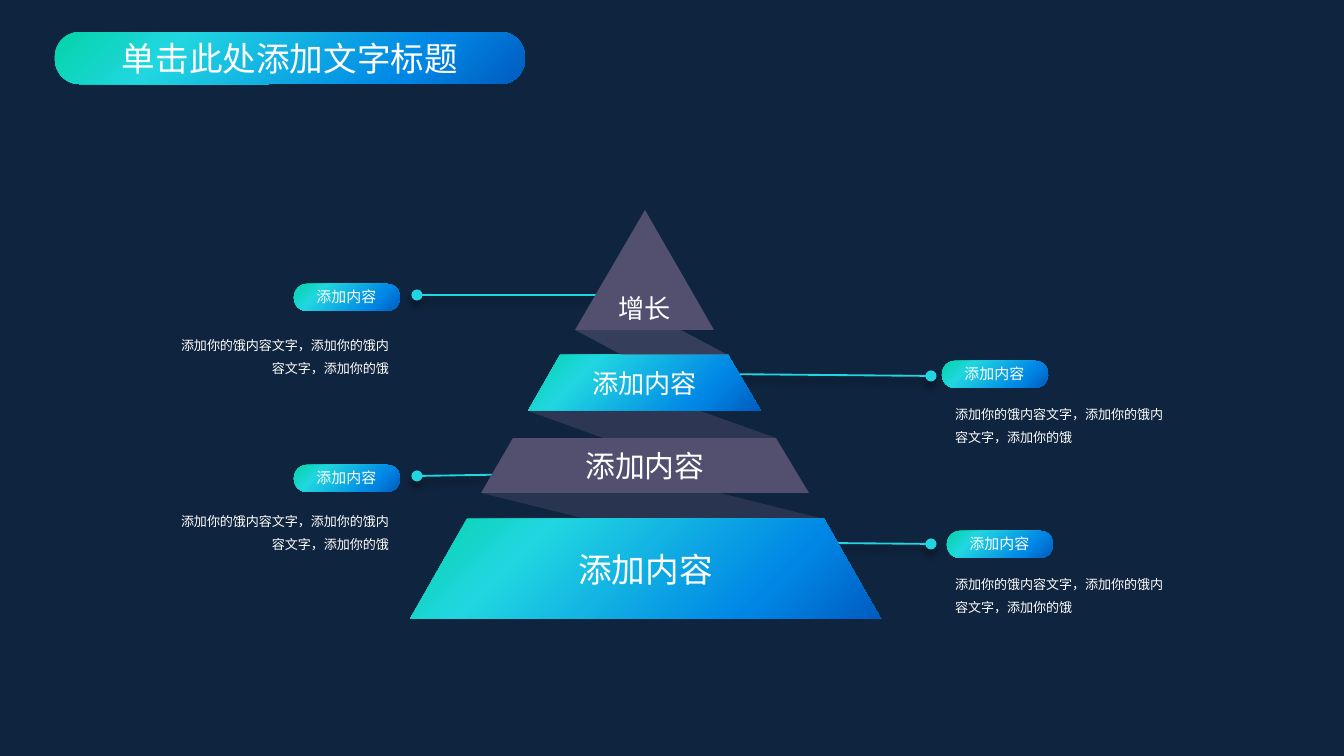
"""Build a dark slide with a four-tier pyramid and its labelled callouts."""
from dataclasses import dataclass

from lxml.etree import SubElement
from pptx import Presentation
from pptx.dml.color import RGBColor
from pptx.enum.shapes import MSO_CONNECTOR, MSO_SHAPE
from pptx.enum.text import MSO_ANCHOR, MSO_AUTO_SIZE, PP_ALIGN
from pptx.oxml.ns import qn
from pptx.util import Pt

SCALE = 914400 / 134.4
NAVY = RGBColor(0x0F, 0x24, 0x3E)
WHITE = RGBColor(0xFF, 0xFF, 0xFF)
CYAN = RGBColor(0x21, 0xD6, 0xE0)
PLUM = RGBColor(0x52, 0x4F, 0x6F)
SLATE = RGBColor(0x57, 0x55, 0x75)
BLACK = RGBColor(0, 0, 0)
STOPS = (
    (0, RGBColor(0x03, 0xD4, 0xA8)),
    (25, CYAN),
    (75, RGBColor(0x00, 0x87, 0xE6)),
    (100, RGBColor(0x00, 0x5C, 0xBF)),
)
SANS = "Noto Sans CJK SC"
LABEL = "添加内容"
NOTE = "添加你的饿内容文字，添加你的饿内容文字，添加你的饿"


@dataclass
class Band:
    top: int
    bottom: int
    top_x: tuple[int, int]
    base_x: tuple[int, int]
    color: RGBColor | None = None
    alpha: int = 100
    text: str = ""
    size: int = 0
    anchor: MSO_ANCHOR = MSO_ANCHOR.MIDDLE


@dataclass
class Callout:
    pill: tuple[int, int]
    note: tuple[int, int]
    start: tuple[int, int]
    end: tuple[int, int]
    align: PP_ALIGN


BANDS = (
    Band(210, 330, (645, 645), (575, 714), PLUM, text="增长", size=14, anchor=MSO_ANCHOR.BOTTOM),
    Band(355, 411, (560, 728), (528, 761), text=LABEL, size=14),
    Band(438, 493, (513, 776), (481, 809), PLUM, text=LABEL, size=16),
    Band(330, 355, (575, 681), (622, 728), SLATE, 54),
    Band(411, 438, (528, 700), (603, 776), PLUM, 46),
    Band(493, 519, (481, 720), (586, 824), PLUM, 38),
    Band(519, 619, (467, 824), (410, 881), text=LABEL, size=18),
)
CALLOUTS = (
    Callout((294, 284), (161, 323), (598, 295), (417, 295), PP_ALIGN.RIGHT),
    Callout((294, 465), (161, 499), (598, 473), (417, 476), PP_ALIGN.RIGHT),
    Callout((942, 361), (942, 392), (714, 374), (931, 376), PP_ALIGN.LEFT),
    Callout((947, 531), (942, 562), (714, 542), (931, 544), PP_ALIGN.LEFT),
)


def emu(*px: int) -> list[int]:
    return [round(p * SCALE) for p in px]


def blend(shape) -> None:
    shape.fill.gradient()
    shape.fill.gradient_angle = 315
    stops = shape._element.spPr.find(".//" + qn("a:gsLst"))
    stops.clear()
    for pos, color in STOPS:
        stop = SubElement(stops, qn("a:gs"), pos=str(pos * 1000))
        SubElement(stop, qn("a:srgbClr"), val=str(color))


def paint(shape, color: RGBColor | None = None, alpha: int = 100) -> None:
    shape.shadow.inherit = False
    shape.line.fill.background()
    if color is None:
        blend(shape)
        return
    shape.fill.solid()
    shape.fill.fore_color.rgb = color
    if alpha < 100:
        tint = shape._element.spPr.find(qn("a:solidFill"))[0]
        SubElement(tint, qn("a:alpha"), val=str(alpha * 1000))


def write(shape, text: str, size: int, font: str = SANS, align: PP_ALIGN = PP_ALIGN.CENTER) -> None:
    shape.text_frame.text = text
    para = shape.text_frame.paragraphs[0]
    para.alignment = align
    run = para.runs[0]
    run.font.size = Pt(size)
    run.font.color.rgb = WHITE
    run.font.name = font
    SubElement(run.font._element, qn("a:ea"), typeface=font)


def add_pill(shapes, x: int, y: int, w: int, h: int):
    pill = shapes.add_shape(MSO_SHAPE.ROUNDED_RECTANGLE, *emu(x, y, w, h))
    pill.adjustments[0] = 0.47
    paint(pill)
    return pill


def add_line(shapes, start: tuple[int, int], end: tuple[int, int]) -> None:
    line = shapes.add_connector(MSO_CONNECTOR.STRAIGHT, *emu(*start, *end))
    line.line.color.rgb = CYAN
    line.line.width = Pt(1)
    SubElement(line.line._ln, qn("a:tailEnd"), type="oval")
    glow = SubElement(line._element.spPr, qn("a:effectLst"))
    shade = SubElement(glow, qn("a:outerShdw"), blurRad=str(Pt(4)), dist=str(Pt(3)), dir="5400000")
    tint = SubElement(shade, qn("a:srgbClr"), val=str(BLACK))
    SubElement(tint, qn("a:alpha"), val="40000")


def add_callout(shapes, item: Callout) -> None:
    x, y = item.pill
    add_pill(shapes, x, y, 106, 27)
    label = shapes.add_textbox(*emu(x + 9, y - 3, 87, 32))
    label.text_frame.word_wrap = False
    write(label, LABEL, 8, "Lato")
    add_line(shapes, item.start, item.end)
    note = shapes.add_textbox(*emu(*item.note, 241, 58))
    note.text_frame.word_wrap = True
    write(note, NOTE, 7, align=item.align)
    note.text_frame.paragraphs[0].line_spacing = 1.5
    for box in (label, note):
        box.text_frame.auto_size = MSO_AUTO_SIZE.SHAPE_TO_FIT_TEXT


def add_band(shapes, band: Band) -> None:
    (tl, tr), (bl, br) = band.top_x, band.base_x
    draft = shapes.build_freeform(bl, band.bottom, scale=SCALE)
    rest = dict.fromkeys([(tl, band.top), (tr, band.top), (br, band.bottom)])
    draft.add_line_segments(list(rest), close=True)
    shape = draft.convert_to_shape()
    paint(shape, band.color, band.alpha)
    if band.text:
        shape.text_frame.vertical_anchor = band.anchor
        write(shape, band.text, band.size)


def main() -> None:
    deck = Presentation()
    deck.slide_width, deck.slide_height = emu(1344, 756)
    slide = deck.slides.add_slide(deck.slide_layouts[6])
    slide.background.fill.solid()
    slide.background.fill.fore_color.rgb = NAVY
    shapes = slide.shapes
    title = add_pill(shapes, 55, 32, 470, 52)
    title.text_frame.vertical_anchor = MSO_ANCHOR.MIDDLE
    write(title, "单击此处添加文字标题", 18)
    for item in CALLOUTS:
        add_callout(shapes, item)
    for band in BANDS:
        add_band(shapes, band)
    deck.save("out.pptx")


if __name__ == "__main__":
    main()
